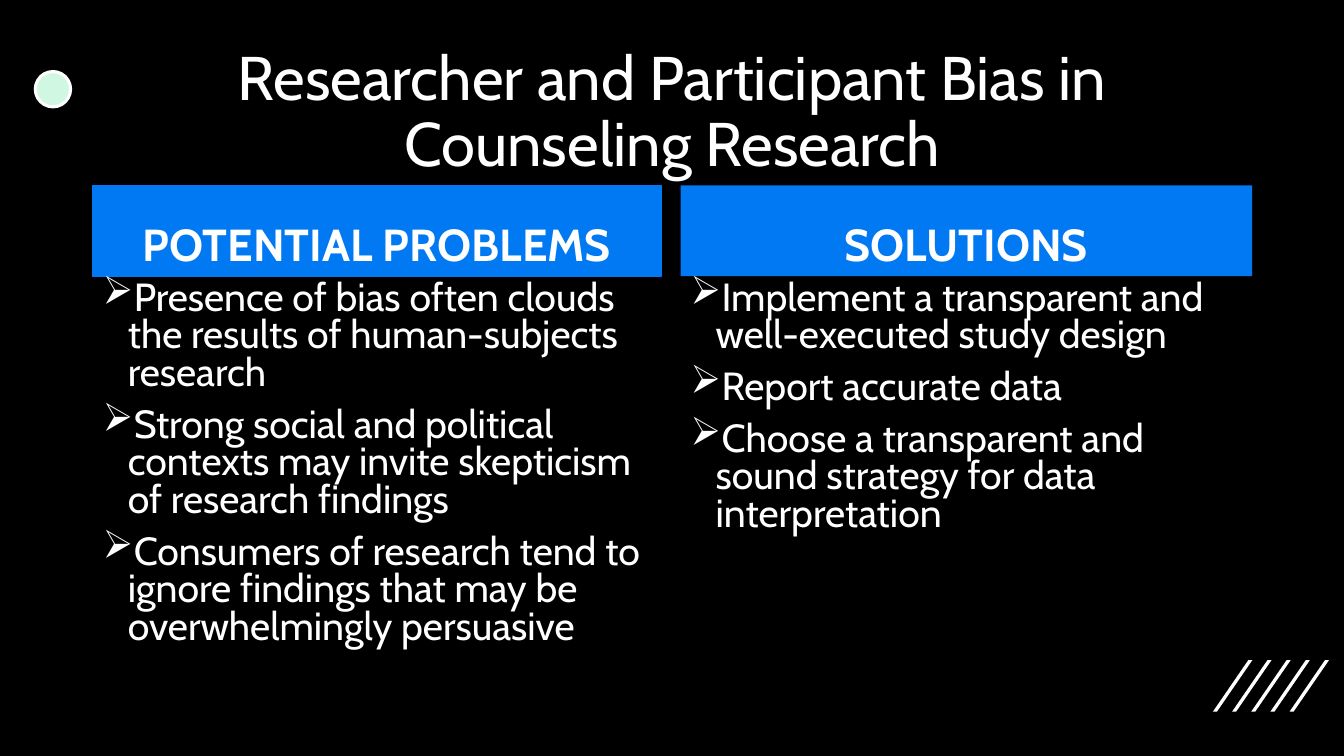
from dataclasses import dataclass

from lxml import etree
from pptx import Presentation
from pptx.dml.color import RGBColor
from pptx.enum.shapes import MSO_SHAPE
from pptx.enum.text import MSO_ANCHOR, PP_ALIGN
from pptx.oxml.ns import qn
from pptx.util import Inches, Pt

OVAL, RECTANGLE = MSO_SHAPE.OVAL, MSO_SHAPE.RECTANGLE
TOP, MIDDLE, BOTTOM = MSO_ANCHOR.TOP, MSO_ANCHOR.MIDDLE, MSO_ANCHOR.BOTTOM
LEFT, CENTER = PP_ALIGN.LEFT, PP_ALIGN.CENTER


@dataclass(frozen=True)
class Theme:
    font: str = "Cabin"
    black: RGBColor = RGBColor(0x00, 0x00, 0x00)
    white: RGBColor = RGBColor(0xFF, 0xFF, 0xFF)
    blue: RGBColor = RGBColor(0x00, 0x79, 0xF2)
    mint: RGBColor = RGBColor(0xCF, 0xF7, 0xE1)
    title_size: int = 44
    heading_size: int = 32
    body_size: int = 28


theme = Theme()


def write_text(shape, texts, size, anchor, align=CENTER, spacing=0.9, bold=False, bullet=None):
    frame = shape.text_frame
    frame.word_wrap = True
    frame.vertical_anchor = anchor
    for index, text in enumerate(texts):
        para = frame.add_paragraph() if index else frame.paragraphs[0]
        para.text = text
        para.alignment = align
        para.line_spacing = spacing
        if index:
            para.space_before = Pt(10)
        if bullet:
            properties = para._p.get_or_add_pPr()
            properties.set("marL", str(Inches(0.25)))
            properties.set("indent", str(-Inches(0.25)))
            etree.SubElement(properties, qn("a:buChar")).set("char", bullet)
        para.font.name = theme.font
        para.font.size = Pt(size)
        para.font.bold = bold
        para.font.color.rgb = theme.white


def paint(shape, fill, line=None, line_width=0.75):
    shape.shadow.inherit = False
    shape.fill.solid()
    shape.fill.fore_color.rgb = fill
    if line is None:
        shape.line.fill.background()
    else:
        shape.line.color.rgb = line
        shape.line.width = Pt(line_width)


deck = Presentation()
deck.slide_width, deck.slide_height = Inches(13.33), Inches(7.5)
page = deck.slides.add_slide(deck.slide_layouts[6])
page.background.fill.solid()
page.background.fill.fore_color.rgb = theme.black

# Slanted stripes in the lower right corner
for number in range(5):
    left = 12.03 + 0.19 * number
    outline = [(left, 7.06), (left + 0.35, 6.55), (left + 0.39, 6.55), (left + 0.04, 7.06)]
    points = [(Inches(x), Inches(y)) for x, y in outline]
    builder = page.shapes.build_freeform(*points[0])
    builder.add_line_segments(points[1:], close=True)
    paint(builder.convert_to_shape(), theme.white)

dot = page.shapes.add_shape(OVAL, Inches(0.35), Inches(0.71), Inches(0.35), Inches(0.35))
paint(dot, theme.mint, theme.white, 2.25)

title = page.shapes.add_textbox(Inches(0.92), Inches(0.4), Inches(11.5), Inches(1.45))
write_text(title, ["Researcher and Participant Bias in Counseling Research"], theme.title_size, MIDDLE)

columns = [
    (0.92, 5.64, theme.blue, "POTENTIAL PROBLEMS", [
        "Presence of bias often clouds the results of human-subjects research",
        "Strong social and political contexts may invite skepticism of research findings",
        "Consumers of research tend to ignore findings that may be overwhelmingly persuasive",
    ]),
    (6.75, 5.67, None, "SOLUTIONS", [
        "Implement a transparent and well-executed study design",
        "Report accurate data",
        "Choose a transparent and sound strategy for data interpretation",
    ]),
]
for left, width, border, heading, points in columns:
    banner = page.shapes.add_shape(RECTANGLE, Inches(left), Inches(1.84), Inches(width), Inches(0.9))
    paint(banner, theme.blue, border)
    write_text(banner, [heading], theme.heading_size, BOTTOM, bold=True)

    body = page.shapes.add_textbox(Inches(left), Inches(2.74), Inches(width), Inches(4.03))
    write_text(body, points, theme.body_size, TOP, LEFT, spacing=0.8, bullet="➢")

deck.save("out.pptx")
